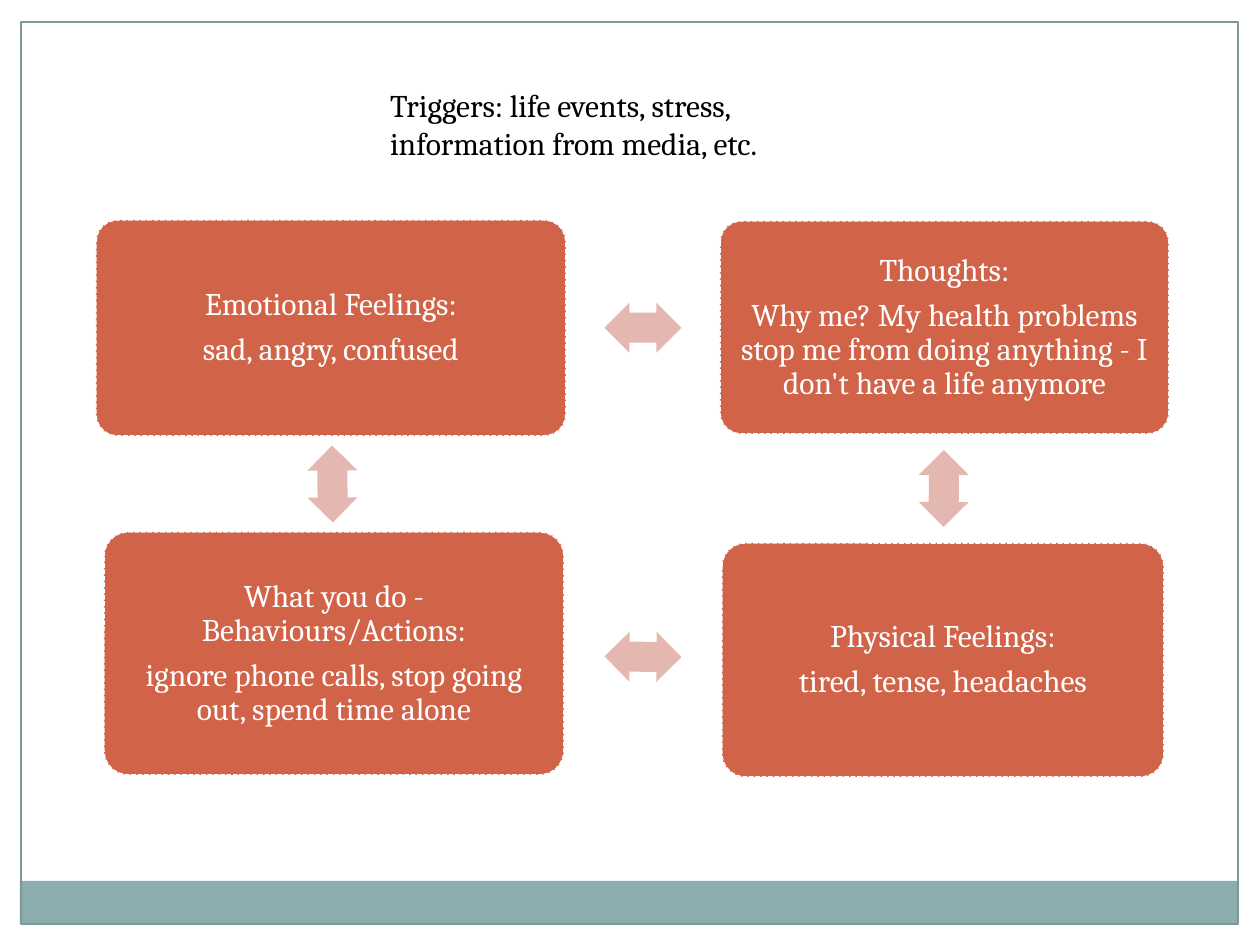
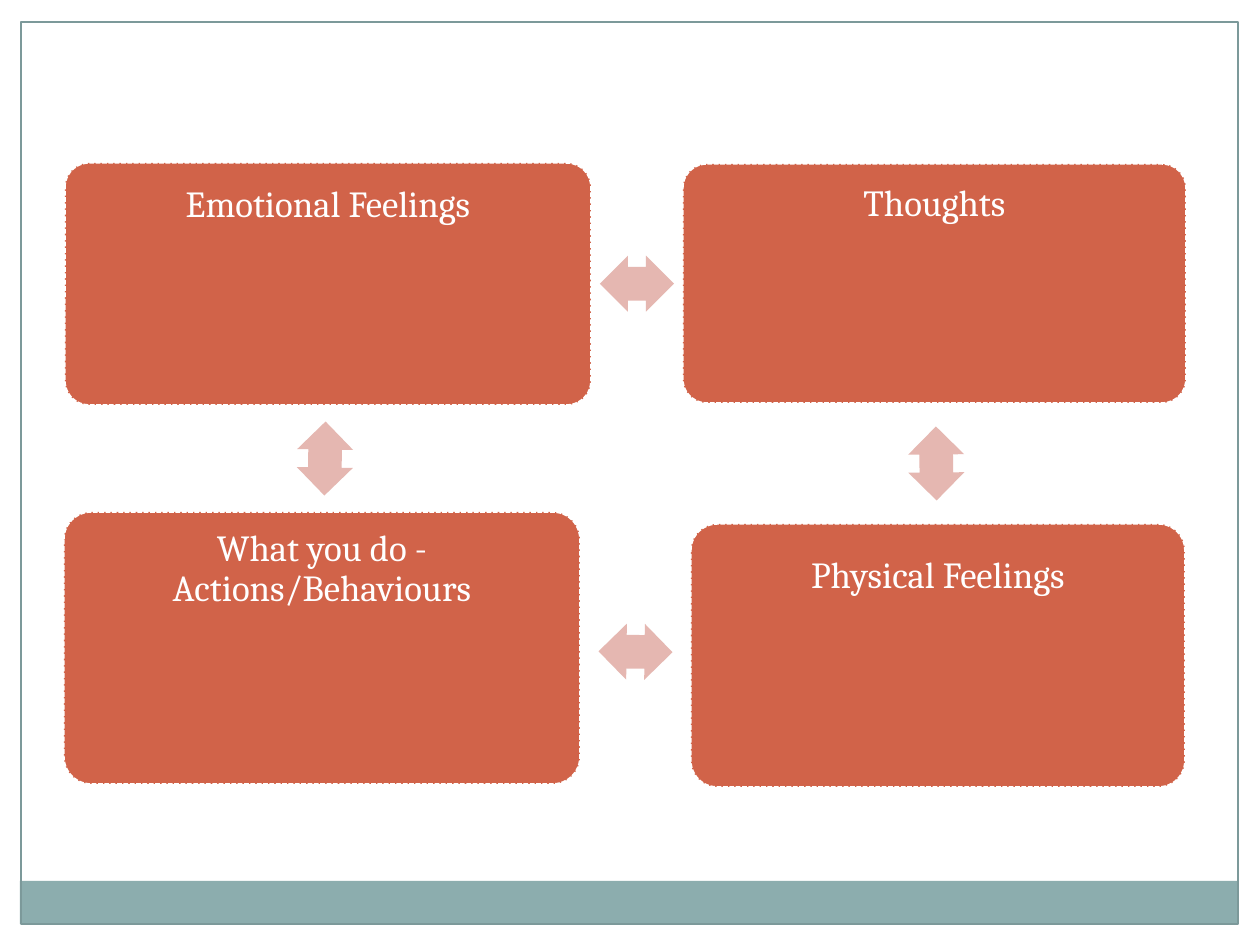
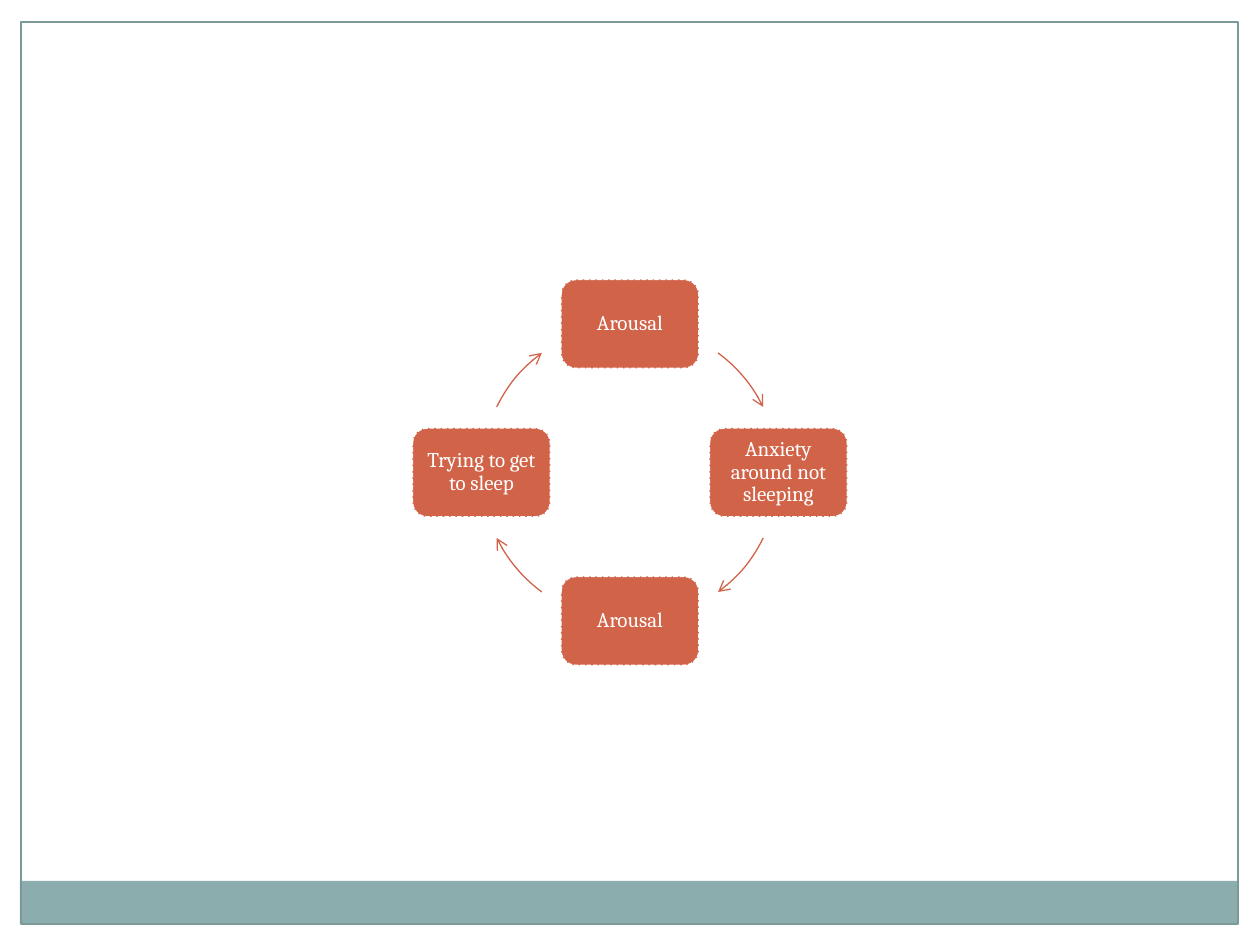
from dataclasses import dataclass
from math import atan2, cos, degrees, radians, sin

from lxml import etree
from pptx import Presentation
from pptx.dml.color import RGBColor
from pptx.enum.dml import MSO_LINE
from pptx.enum.shapes import MSO_SHAPE
from pptx.enum.text import MSO_ANCHOR, PP_ALIGN
from pptx.oxml.ns import qn
from pptx.util import Pt

RECTANGLE = MSO_SHAPE.RECTANGLE
ROUNDED = MSO_SHAPE.ROUNDED_RECTANGLE
DOUBLE_ARROW = MSO_SHAPE.LEFT_RIGHT_ARROW
ARC = MSO_SHAPE.ARC
TOP, MIDDLE = MSO_ANCHOR.TOP, MSO_ANCHOR.MIDDLE
LEFT, CENTER = PP_ALIGN.LEFT, PP_ALIGN.CENTER
SHORT_DASH = MSO_LINE.SQUARE_DOT

EMU_PER_PX = 914400 // 126
PAGE_SIZE = (1260, 945)


@dataclass(frozen=True)
class Theme:
    font: str = "Cambria"
    box: str = "D16349"
    arrow: str = "E5B7B1"
    band: str = "8CADAE"
    frame: str = "7C999A"
    light: str = "FFFFFF"
    dark: str = "000000"
    body_size: int = 18
    heading_size: int = 21
    cycle_size: int = 12
    thin: float = 0.75
    dashed: float = 0.9


THEME = Theme()

MARGINS = [(0, 0, 1260, 21), (1239, 0, 21, 945), (0, 0, 21, 945)]
BAND = (20, 881, 1217, 43)
FRAME = (21, 22, 1217, 902)

TRIGGERS = "Triggers: life events, stress, information from media, etc."
TRIGGERS_AREA = (377, 80, 499, 89)

# Boxes run clockwise from the top left.
EXAMPLE_BOXES = [
    ((96, 220, 470, 216), ["Emotional Feelings:", "sad, angry, confused"]),
    ((720, 221, 449, 213), [
        "Thoughts:",
        "Why me? My health problems stop me from doing anything - I don't have a life anymore",
    ]),
    ((722, 543, 442, 234), ["Physical Feelings:", "tired, tense, headaches"]),
    ((104, 532, 460, 243), [
        "What you do - Behaviours/Actions:",
        "ignore phone calls, stop going out, spend time alone",
    ]),
]
WORKSHEET_BOXES = [
    ((65, 163, 526, 242), ["Emotional Feelings"]),
    ((683, 164, 503, 239), ["Thoughts"]),
    ((691, 524, 494, 263), ["Physical Feelings"]),
    ((64, 512, 516, 272), ["What you do - Actions/Behaviours"]),
]
WRITING_ROOM = 157  # space kept free under each worksheet heading

SLEEP_CYCLE = ["Arousal", "Anxiety around not sleeping", "Arousal", "Trying to get to sleep"]
CYCLE_CENTER = (630, 472.5)
CYCLE_RADIUS = 148.5
CYCLE_BOX = (138, 89)
# Degrees from a box to the two ends of its arrow: top and bottom boxes, then side boxes.
ARROW_SWEEPS = [(36.4, 63.8), (26.2, 53.6)]
ARC_UNITS_PER_DEGREE = 0.6


def px(length):
    return round(length * EMU_PER_PX)


def color(value):
    return RGBColor.from_string(value)


def add_shape(page, kind, area, fill=None, line=None, width=THEME.thin, dash=None):
    shape = page.shapes.add_shape(kind, *map(px, area))
    shape.shadow.inherit = False
    if fill:
        shape.fill.solid()
        shape.fill.fore_color.rgb = color(fill)
    else:
        shape.fill.background()
    if line:
        shape.line.color.rgb = color(line)
        shape.line.width = Pt(width)
        if dash:
            shape.line.dash_style = dash
    else:
        shape.line.fill.background()
    return shape


def write(shape, paragraphs, size, ink=THEME.light, align=CENTER, anchor=MIDDLE,
          insets=(0, 0, 0, 0), spacing=0.9, after=0.35):
    """Fill a shape with text; insets go left, top, right, bottom; after is a share of size."""
    frame = shape.text_frame
    frame.word_wrap = True
    frame.vertical_anchor = anchor
    (frame.margin_left, frame.margin_top,
     frame.margin_right, frame.margin_bottom) = map(px, insets)
    for index, text in enumerate(paragraphs):
        para = frame.add_paragraph() if index else frame.paragraphs[0]
        para.alignment = align
        para.line_spacing = spacing
        para.space_after = Pt(size * after)
        span = para.add_run()
        span.text = text
        span.font.name = THEME.font
        span.font.size = Pt(size)
        span.font.color.rgb = color(ink)


def add_page(deck):
    page = deck.slides.add_slide(deck.slide_layouts[6])
    for margin in MARGINS:
        add_shape(page, RECTANGLE, margin, fill=THEME.light)
    add_shape(page, RECTANGLE, BAND, fill=THEME.band)
    add_shape(page, RECTANGLE, FRAME, line=THEME.frame)
    return page


def add_box(page, area, paragraphs, size, inset, room=0, corner=None):
    box = add_shape(page, ROUNDED, area, THEME.box, THEME.light, THEME.dashed, SHORT_DASH)
    if corner:
        box.adjustments[0] = corner
    write(box, paragraphs, size, insets=(inset, inset, inset, inset + room))


def middle_between(start, length, other_start, other_length):
    """Middle of the gap between two spans, or of their centres when they overlap."""
    gap_start = min(start + length, other_start + other_length)
    gap_end = max(start, other_start)
    if gap_end > gap_start:
        return (gap_start + gap_end) / 2
    return (start + other_start + (length + other_length) / 2) / 2


def add_link(page, area, other, size):
    """Double arrow in the gap between two boxes, turned along the line of their centres."""
    left, top, width, height = area
    other_left, other_top, other_width, other_height = other
    x = middle_between(left, width, other_left, other_width)
    y = middle_between(top, height, other_top, other_height)
    run = other_left + other_width / 2 - left - width / 2
    rise = other_top + other_height / 2 - top - height / 2
    arrow = add_shape(page, DOUBLE_ARROW, (x - size[0] / 2, y - size[1] / 2, *size), THEME.arrow)
    arrow.adjustments[0], arrow.adjustments[1] = 0.6, 0.5
    arrow.rotation = degrees(atan2(rise, run)) % 360


def add_linked_boxes(page, boxes, arrow_size, **text_format):
    areas = [area for area, _ in boxes]
    for index, (area, paragraphs) in enumerate(boxes):
        add_box(page, area, paragraphs, corner=0.1, **text_format)
        add_link(page, area, areas[(index + 1) % len(areas)], arrow_size)


def add_arc_arrow(page, start, end):
    x, y = CYCLE_CENTER
    diameter = 2 * CYCLE_RADIUS
    area = (x - CYCLE_RADIUS, y - CYCLE_RADIUS, diameter, diameter)
    arc = add_shape(page, ARC, area, line=THEME.box)
    for index, angle in enumerate((start, end)):
        arc.adjustments[index] = angle % 360 * ARC_UNITS_PER_DEGREE
    etree.SubElement(arc.line._get_or_add_ln(), qn("a:tailEnd"), type="arrow")


def add_cycle(page):
    width, height = CYCLE_BOX
    for index, text in enumerate(SLEEP_CYCLE):
        angle = 90 * index - 90
        x = CYCLE_CENTER[0] + CYCLE_RADIUS * cos(radians(angle))
        y = CYCLE_CENTER[1] + CYCLE_RADIUS * sin(radians(angle))
        add_box(page, (x - width / 2, y - height / 2, width, height), [text],
                THEME.cycle_size, inset=6)
        start, end = ARROW_SWEEPS[index % 2]
        add_arc_arrow(page, angle + start, angle + end)


def main():
    deck = Presentation()
    deck.slide_width, deck.slide_height = map(px, PAGE_SIZE)

    example = add_page(deck)
    add_linked_boxes(example, EXAMPLE_BOXES, (77, 50), size=THEME.body_size, inset=9)
    triggers = example.shapes.add_textbox(*map(px, TRIGGERS_AREA))
    write(triggers, [TRIGGERS], THEME.body_size, ink=THEME.dark, align=LEFT, anchor=TOP,
          insets=(13, 6, 13, 6), spacing=1.0, after=0)

    worksheet = add_page(deck)
    add_linked_boxes(worksheet, WORKSHEET_BOXES, (74, 56), size=THEME.heading_size,
                     inset=11, room=WRITING_ROOM)

    add_cycle(add_page(deck))
    deck.save("out.pptx")


if __name__ == "__main__":
    main()
